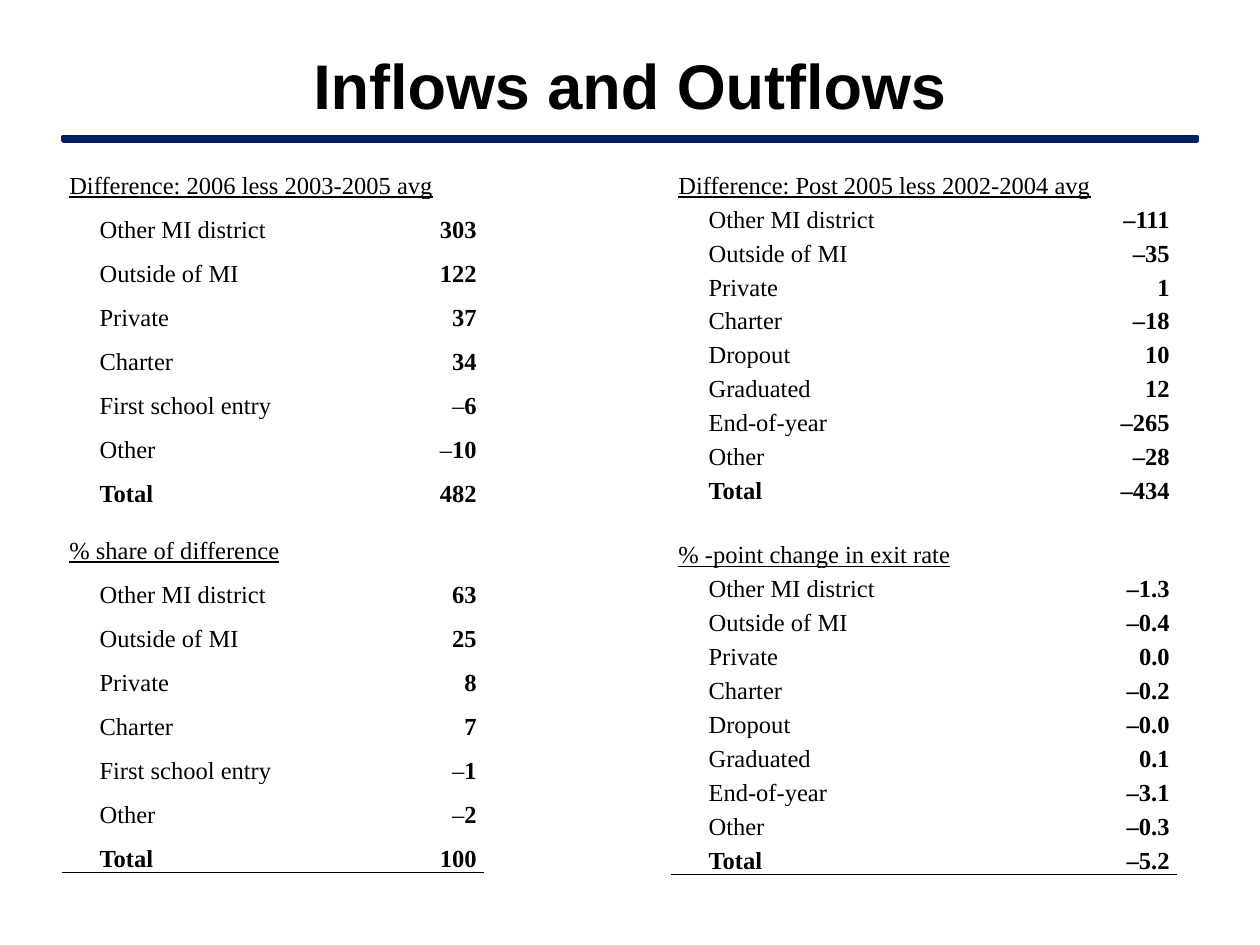
from lxml import etree
from pptx import Presentation
from pptx.dml.color import RGBColor
from pptx.enum.shapes import MSO_SHAPE
from pptx.enum.text import MSO_ANCHOR, PP_ALIGN
from pptx.oxml import parse_xml
from pptx.oxml.ns import nsdecls, qn
from pptx.util import Pt

RECTANGLE = MSO_SHAPE.RECTANGLE
MIDDLE, BOTTOM = MSO_ANCHOR.MIDDLE, MSO_ANCHOR.BOTTOM
CENTER, RIGHT = PP_ALIGN.CENTER, PP_ALIGN.RIGHT

COLORS = {"text": "000000", "rule": "002060"}
HEADING_HEIGHT = 23.9
CELL_MARGIN = 3.6
LABEL_INDENT = 17.3
TITLE_LAYOUT = 5

INFLOW_GROUPS = [
    ("Difference: 2006 less 2003-2005 avg", [
        ("Other MI district", "303"), ("Outside of MI", "122"),
        ("Private", "37"), ("Charter", "34"),
        ("First school entry", "–6"), ("Other", "–10"), ("Total", "482")]),
    ("% share of difference", [
        ("Other MI district", "63"), ("Outside of MI", "25"),
        ("Private", "8"), ("Charter", "7"),
        ("First school entry", "–1"), ("Other", "–2"), ("Total", "100")]),
]
OUTFLOW_GROUPS = [
    ("Difference: Post 2005 less 2002-2004 avg", [
        ("Other MI district", "–111"), ("Outside of MI", "–35"),
        ("Private", "1"), ("Charter", "–18"), ("Dropout", "10"),
        ("Graduated", "12"), ("End-of-year", "–265"), ("Other", "–28"),
        ("Total", "–434")]),
    ("% -point change in exit rate", [
        ("Other MI district", "–1.3"), ("Outside of MI", "–0.4"),
        ("Private", "0.0"), ("Charter", "–0.2"), ("Dropout", "–0.0"),
        ("Graduated", "0.1"), ("End-of-year", "–3.1"), ("Other", "–0.3"),
        ("Total", "–5.2")]),
]


class SlideBuilder:
    def __init__(self, slide):
        self.slide = slide
        self.title_font, self.title_size = "Arial", 36
        self.table_font, self.table_size = "Times New Roman", 14

    def style(self, span, name, size, bold=False, underline=False, italic=False):
        font = span.font
        font.name, font.size = name, Pt(size)
        font.bold, font.underline, font.italic = bold, underline, italic
        font.color.rgb = RGBColor.from_string(COLORS["text"])

    def title(self, text, left, top, width, height):
        box = self.slide.shapes.title
        box.left, box.top, box.width, box.height = map(Pt, (left, top, width, height))
        frame = box.text_frame
        frame.text = text
        frame.vertical_anchor = MIDDLE
        para = frame.paragraphs[0]
        para.alignment = CENTER
        self.style(para.runs[0], self.title_font, self.title_size, bold=True)

    def bar(self, left, top, width, height):
        shape = self.slide.shapes.add_shape(
            RECTANGLE, Pt(left), Pt(top), Pt(width), Pt(height))
        shape.shadow.inherit = False
        color = RGBColor.from_string(COLORS["rule"])
        shape.fill.solid()
        shape.fill.fore_color.rgb = color
        shape.line.color.rgb = color
        shape.line.width = Pt(2)

    def cell_text(self, cell, text, **look):
        para = cell.text_frame.paragraphs[0]
        span = para.add_run()
        span.text = text
        self.style(span, self.table_font, self.table_size, **look)
        return para

    def number(self, cell, value, light_dash):
        """Add a right-aligned bold value, its dash italic and light if asked."""
        if light_dash and value.startswith("–"):
            self.cell_text(cell, "–", italic=True)
            value = value[1:]
        self.cell_text(cell, value, bold=True).alignment = RIGHT

    def prepare(self, cell):
        cell.fill.background()
        cell.vertical_anchor = BOTTOM
        cell.margin_left = cell.margin_right = Pt(CELL_MARGIN)
        cell.margin_top = cell.margin_bottom = 0

    def shrink_empty(self, cell):
        """Give an empty cell a small font so that its row can stay low."""
        para = cell.text_frame.paragraphs[0]
        etree.SubElement(para._p, qn("a:endParaRPr")).set("sz", "600")

    def underline_cell(self, cell):
        border = parse_xml(
            f'<a:lnB {nsdecls("a")} w="12700"><a:solidFill>'
            f'<a:srgbClr val="{COLORS["text"]}"/></a:solidFill></a:lnB>')
        cell._tc.get_or_add_tcPr().insert(0, border)

    def flow_table(self, groups, left, top, widths, row_height, gap, light_dash=False):
        rows = []
        for heading, entries in groups:
            if rows:
                rows.append((gap, None, None))
            rows.append((HEADING_HEIGHT, heading, None))
            rows += [(row_height, label, value) for label, value in entries]
        total_height = sum(height for height, _, _ in rows)
        table = self.slide.shapes.add_table(
            len(rows), 2, Pt(left), Pt(top), Pt(sum(widths)), Pt(total_height)).table
        table.first_row = table.horz_banding = False
        for column, width in zip(table.columns, widths):
            column.width = Pt(width)
        for index, (height, label, value) in enumerate(rows):
            table.rows[index].height = Pt(height)
            name_cell, value_cell = table.cell(index, 0), table.cell(index, 1)
            for cell in (name_cell, value_cell):
                self.prepare(cell)
            if value is not None:
                name_cell.margin_left = Pt(CELL_MARGIN + LABEL_INDENT)
                self.cell_text(name_cell, label, bold=label == "Total")
                self.number(value_cell, value, light_dash)
            else:
                self.shrink_empty(value_cell)
                if label is None:
                    self.shrink_empty(name_cell)
                else:
                    self.cell_text(name_cell, label, underline=True)
        table.cell(0, 0).merge(table.cell(0, 1))
        for cell in (name_cell, value_cell):
            self.underline_cell(cell)


def main():
    deck = Presentation()
    deck.slide_width, deck.slide_height = Pt(720), Pt(540)
    page = SlideBuilder(deck.slides.add_slide(deck.slide_layouts[TITLE_LAYOUT]))
    page.title("Inflows and Outflows", 36, 14, 648, 68.4)
    page.bar(36, 78, 648, 2.6)
    page.flow_table(INFLOW_GROUPS, 36, 90, (163, 77), 25.15, 8.8, light_dash=True)
    page.flow_table(OUTFLOW_GROUPS, 384, 90, (195, 93), 19.44, 12.5)
    deck.save("out.pptx")


if __name__ == "__main__":
    main()
